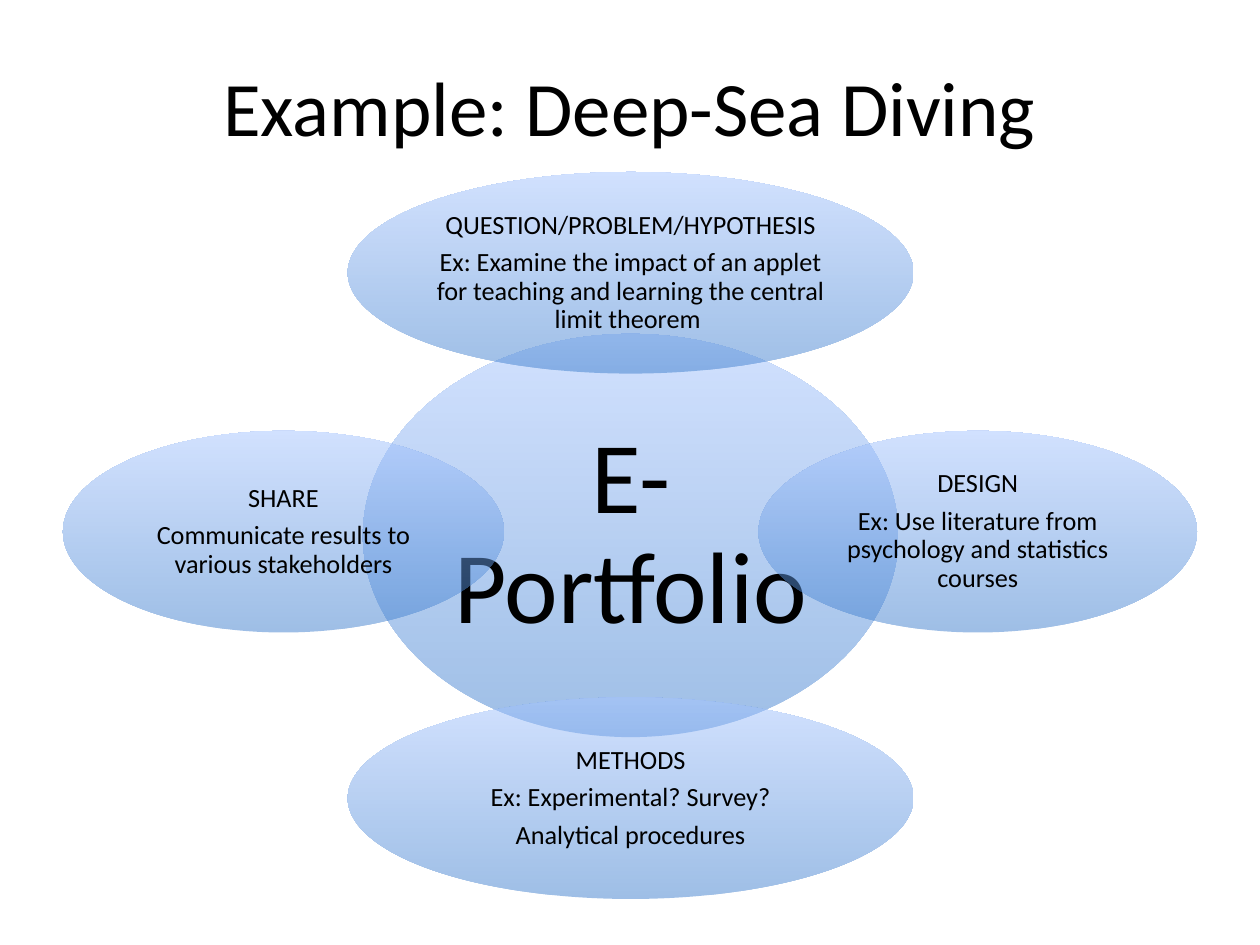
from dataclasses import dataclass

import lxml.etree
import pptx
import pptx.dml.color
import pptx.enum.shapes
import pptx.enum.text
import pptx.oxml.ns
import pptx.util

RGBColor = pptx.dml.color.RGBColor
BLACK = RGBColor(0x00, 0x00, 0x00)
DEEP_BLUE = RGBColor(0x3F, 0x7F, 0xCE)
PALE_BLUE = RGBColor(0xA4, 0xC4, 0xFF)
FONT = "Calibri"
OPACITY = 50  # percent

SLIDE_WIDTH, SLIDE_HEIGHT = pptx.util.Inches(10), pptx.util.Inches(7.5)

# Shares of the slide's width (x) and height (y)
HUB_X, HUB_Y = 0.5005, 0.5667
HUB_HEIGHT = 0.4267
STEP_HEIGHT = HUB_HEIGHT / 2
RISE = 0.278  # hub centre to the upper and lower steps
SIDE_Y = 0.5627


@dataclass(frozen=True)
class Bubble:
    centre_x: float
    centre_y: float
    width: float
    height: float
    lines: tuple[str, ...]
    size: int = 15
    inset: float = 0.02


# The hub first, then the steps clockwise from the top
BUBBLES = (
    Bubble(HUB_X, HUB_Y, 0.425, HUB_HEIGHT, ("E-Portfolio",), 58, 0.08),
    Bubble(HUB_X, HUB_Y - RISE, 0.449, STEP_HEIGHT, (
        "QUESTION/PROBLEM/HYPOTHESIS",
        "Ex: Examine the impact of an applet for teaching and learning "
        "the central limit theorem ")),
    Bubble(0.776, SIDE_Y, 0.348, STEP_HEIGHT, (
        "DESIGN",
        "Ex: Use literature from psychology and statistics courses")),
    Bubble(HUB_X, HUB_Y + RISE, 0.449, STEP_HEIGHT, (
        "METHODS", "Ex: Experimental? Survey?", "Analytical procedures")),
    Bubble(0.225, SIDE_Y, 0.35, STEP_HEIGHT, (
        "SHARE", "Communicate results to various stakeholders")),
)


def apply_format(target: object, values: dict) -> None:
    for name, value in values.items():
        setattr(target, name, value)


def write_para(para, text: str, size: int, layout: dict) -> None:
    apply_format(para, {"alignment": pptx.enum.text.PP_ALIGN.CENTER, **layout})
    span = para.add_run()
    span.text = text
    apply_format(span.font, {"name": FONT, "size": pptx.util.Pt(size)})
    span.font.color.rgb = BLACK


def fill_gradient(shape) -> None:
    """Translucent gradient, dark at the bottom and pale at the top."""
    shape.fill.gradient()
    shape.fill.gradient_angle = 90
    for stop, colour in zip(shape.fill.gradient_stops, (DEEP_BLUE, PALE_BLUE)):
        stop.color.rgb = colour
    for colour in shape.element.spPr.iter(pptx.oxml.ns.qn("a:srgbClr")):
        alpha = lxml.etree.SubElement(colour, pptx.oxml.ns.qn("a:alpha"))
        alpha.set("val", str(OPACITY * 1000))


def draw_bubble(page, bubble: Bubble) -> None:
    shape = page.shapes.add_shape(
        pptx.enum.shapes.MSO_SHAPE.OVAL,
        round((bubble.centre_x - bubble.width / 2) * SLIDE_WIDTH),
        round((bubble.centre_y - bubble.height / 2) * SLIDE_HEIGHT),
        round(bubble.width * SLIDE_WIDTH),
        round(bubble.height * SLIDE_HEIGHT))
    shape.shadow.inherit = False
    shape.line.fill.background()
    fill_gradient(shape)

    frame = shape.text_frame
    inset = pptx.util.Inches(bubble.inset)
    apply_format(frame, {
        "word_wrap": True,
        "vertical_anchor": pptx.enum.text.MSO_ANCHOR.MIDDLE,
        "margin_left": inset, "margin_right": inset,
        "margin_top": inset, "margin_bottom": inset})
    layout = {"line_spacing": 0.9,
              "space_after": pptx.util.Pt(0.35 * bubble.size)}
    for index, line in enumerate(bubble.lines):
        para = frame.add_paragraph() if index else frame.paragraphs[0]
        write_para(para, line, bubble.size, layout)


def main() -> None:
    deck = pptx.Presentation()
    apply_format(deck, {"slide_width": SLIDE_WIDTH,
                        "slide_height": SLIDE_HEIGHT})
    page = deck.slides.add_slide(deck.slide_layouts[5])

    # Title
    title = page.shapes.title
    apply_format(title, {
        "left": round(0.05 * SLIDE_WIDTH), "top": round(0.04 * SLIDE_HEIGHT),
        "width": round(0.9 * SLIDE_WIDTH),
        "height": round(0.1427 * SLIDE_HEIGHT)})
    title.text_frame.vertical_anchor = pptx.enum.text.MSO_ANCHOR.MIDDLE
    write_para(title.text_frame.paragraphs[0], "Example: Deep-Sea Diving", 44, {})

    # Hub and its four steps
    for bubble in BUBBLES:
        draw_bubble(page, bubble)

    deck.save("out.pptx")


if __name__ == "__main__":
    main()
